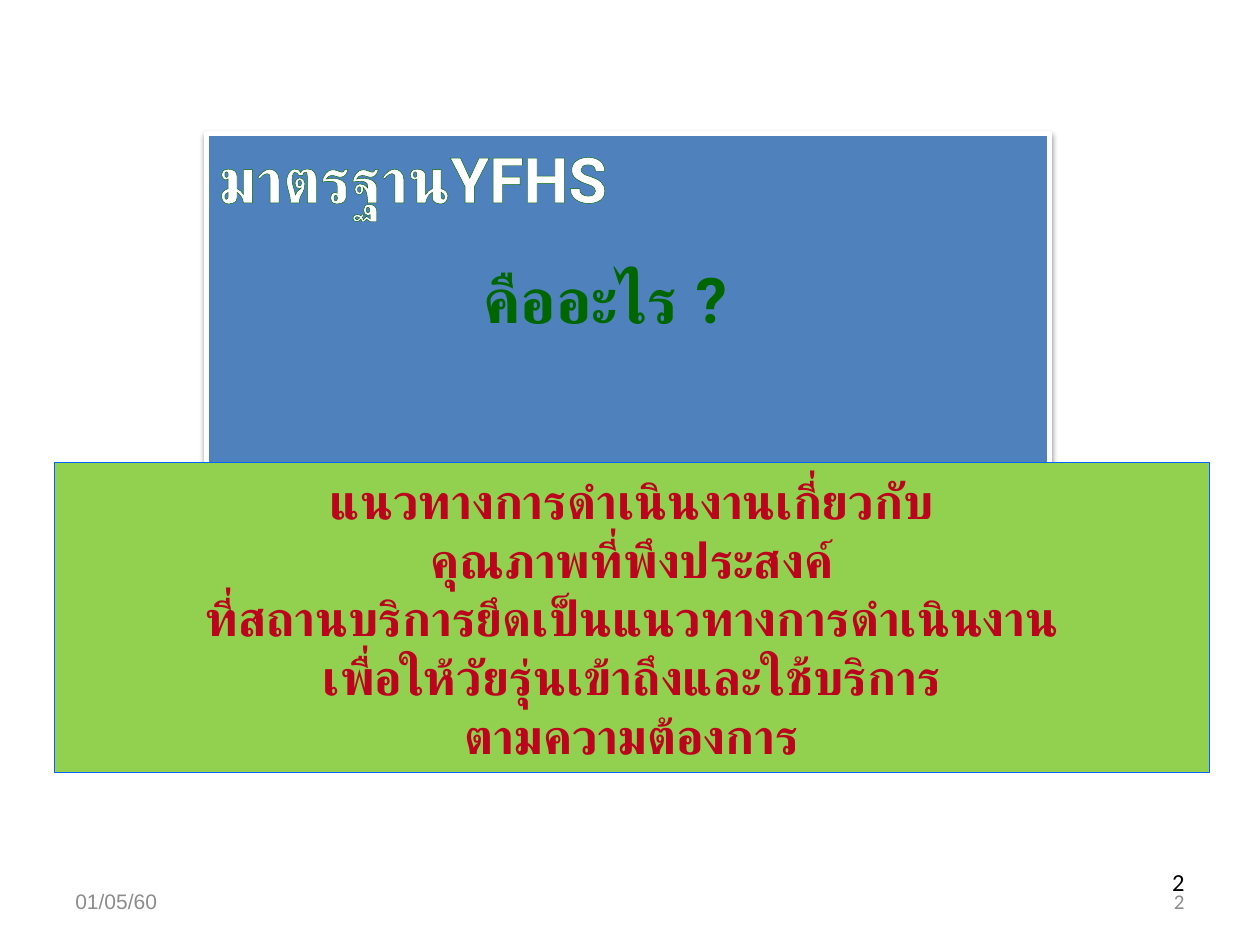
from dataclasses import dataclass

from pptx import Presentation
from pptx import util as u
from pptx.dml.color import RGBColor
from pptx.enum import shapes, text
from pptx.oxml import parse_xml
from pptx.oxml.ns import nsdecls


@dataclass(frozen=True)
class Theme:
    """Hold the colours, fonts and type sizes of the deck."""
    panel: str = "4F81BD"
    frame: str = "FFFFFF"
    answer: str = "92D050"
    answer_edge: str = "0066FF"
    answer_ink: str = "BC041E"
    green: str = "006600"
    mint: str = "00FF99"
    muted: str = "8C8C8C"
    black: str = "000000"
    display: str = "Roboto"
    number: str = "Calibri"
    date: str = "Arial"
    heading_size: int = 36
    body_size: int = 28
    number_size: int = 14
    footer_size: int = 12


THEME = Theme()
LEFT, CENTER, RIGHT = text.PP_ALIGN.LEFT, text.PP_ALIGN.CENTER, text.PP_ALIGN.RIGHT
TOP, MIDDLE = text.MSO_ANCHOR.TOP, text.MSO_ANCHOR.MIDDLE


def rgb(value):
    """Turn a hex string into a colour."""
    return RGBColor.from_string(value)


def place(shape, box):
    """Move a shape to a box of left, top, width and height in inches."""
    shape.left, shape.top, shape.width, shape.height = map(u.Inches, box)


def paint(shape, fill, line, width):
    """Give a shape a solid fill and an outline."""
    shape.fill.solid()
    shape.fill.fore_color.rgb = rgb(fill)
    shape.line.color.rgb = rgb(line)
    shape.line.width = u.Pt(width)


def outline_text(span, color, width):
    """Draw an outline around the letters of a run."""
    span.font.element.insert(0, parse_xml(
        f'<a:ln {nsdecls("a")} w="{u.Pt(width)}"><a:solidFill>'
        f'<a:srgbClr val="{color}"/></a:solidFill></a:ln>')) if hasattr(
            span.font, "element") else span._r.get_or_add_rPr().insert(0, parse_xml(
                f'<a:ln {nsdecls("a")} w="{u.Pt(width)}"><a:solidFill>'
                f'<a:srgbClr val="{color}"/></a:solidFill></a:ln>'))


def write(shape, words, *, size, font, color, fade=None, bold=False, align=LEFT,
          anchor=TOP, wrap=True, fit=text.MSO_AUTO_SIZE.NONE, outline=None):
    """Write one paragraph per line of words in the given format."""
    frame = shape.text_frame
    frame.text = words
    frame.word_wrap = wrap
    frame.auto_size = fit
    frame.vertical_anchor = anchor
    for para in frame.paragraphs:
        para.alignment = align
        for span in para.runs:
            span.font.size, span.font.name, span.font.bold = u.Pt(size), font, bold
            if fade:
                span.font.fill.gradient()
                span.font.fill.gradient_angle = 270
                for stop, shade in zip(span.font.fill.gradient_stops, (color, fade)):
                    stop.color.rgb = rgb(shade)
            else:
                span.font.color.rgb = rgb(color)
            if outline:
                outline_text(span, *outline)


def add_label(page, box, words, **style):
    """Add a text box with formatted words."""
    label = page.shapes.add_textbox(*map(u.Inches, box))
    write(label, words, **style)


def add_heading(page, box):
    """Turn the title into a framed panel and set the question inside it."""
    panel = page.shapes.title
    place(panel, box)
    paint(panel, THEME.panel, THEME.frame, 3)
    panel.element.spPr.append(parse_xml(
        f'<a:effectLst {nsdecls("a")}><a:outerShdw blurRad="{u.Pt(3.1)}" '
        f'dist="{u.Pt(1.6)}" dir="5400000" rotWithShape="0"><a:srgbClr val="{THEME.black}">'
        '<a:alpha val="38000"/></a:srgbClr></a:outerShdw></a:effectLst>'))
    style = dict(size=THEME.heading_size, font=THEME.display, bold=True, wrap=False)
    write(panel, "มาตรฐานYFHS", color=THEME.frame, outline=(THEME.green, 3), **style)
    left, top = box[:2]
    add_label(page, (left + 2.1, top + 0.96, 2.44, 0.63), "คืออะไร ?", color=THEME.green,
              fade=THEME.mint, outline=(THEME.green, 0.75), **style)


def add_answer(page, box):
    """Add the green box that answers the question."""
    answer = page.shapes.add_shape(shapes.MSO_SHAPE.RECTANGLE, *map(u.Inches, box))
    answer.shadow.inherit = False
    paint(answer, THEME.answer, THEME.answer_edge, 0.25)
    lines = ("แนวทางการดำเนินงานเกี่ยวกับ",
             "คุณภาพที่พึงประสงค์",
             "ที่สถานบริการยึดเป็นแนวทางการดำเนินงาน",
             "เพื่อให้วัยรุ่นเข้าถึงและใช้บริการ",
             "ตามความต้องการ")
    write(answer, "\n".join(lines), size=THEME.body_size, font=THEME.display,
          color=THEME.answer_ink, bold=True, align=CENTER, anchor=MIDDLE,
          fit=text.MSO_AUTO_SIZE.SHAPE_TO_FIT_TEXT)


def add_footer(page, box):
    """Add the date at the left and the page numbers at the right."""
    left, top, width, height = box
    field = 2.33
    right = left + width - field
    style = dict(size=THEME.footer_size, color=THEME.muted, anchor=MIDDLE)
    add_label(page, (left, top, field, height), "01/05/60", font=THEME.date, **style)
    add_label(page, (right, top, field, height), "2", font=THEME.number,
              align=RIGHT, **style)
    add_label(page, (right, top - 0.12, field, 0.52), "2", size=THEME.number_size,
              font=THEME.number, color=THEME.black, align=RIGHT)


def main():
    """Build the deck and save it."""
    deck = Presentation()
    deck.slide_width, deck.slide_height = u.Inches(10), u.Inches(7.5)
    page = deck.slides.add_slide(deck.slide_layouts[5])
    add_heading(page, (1.64, 1.06, 6.69, 4.8))
    add_answer(page, (0.43, 3.67, 9.17, 2.46))
    add_footer(page, (0.5, 6.95, 9, 0.4))
    deck.save("out.pptx")


if __name__ == "__main__":
    main()
